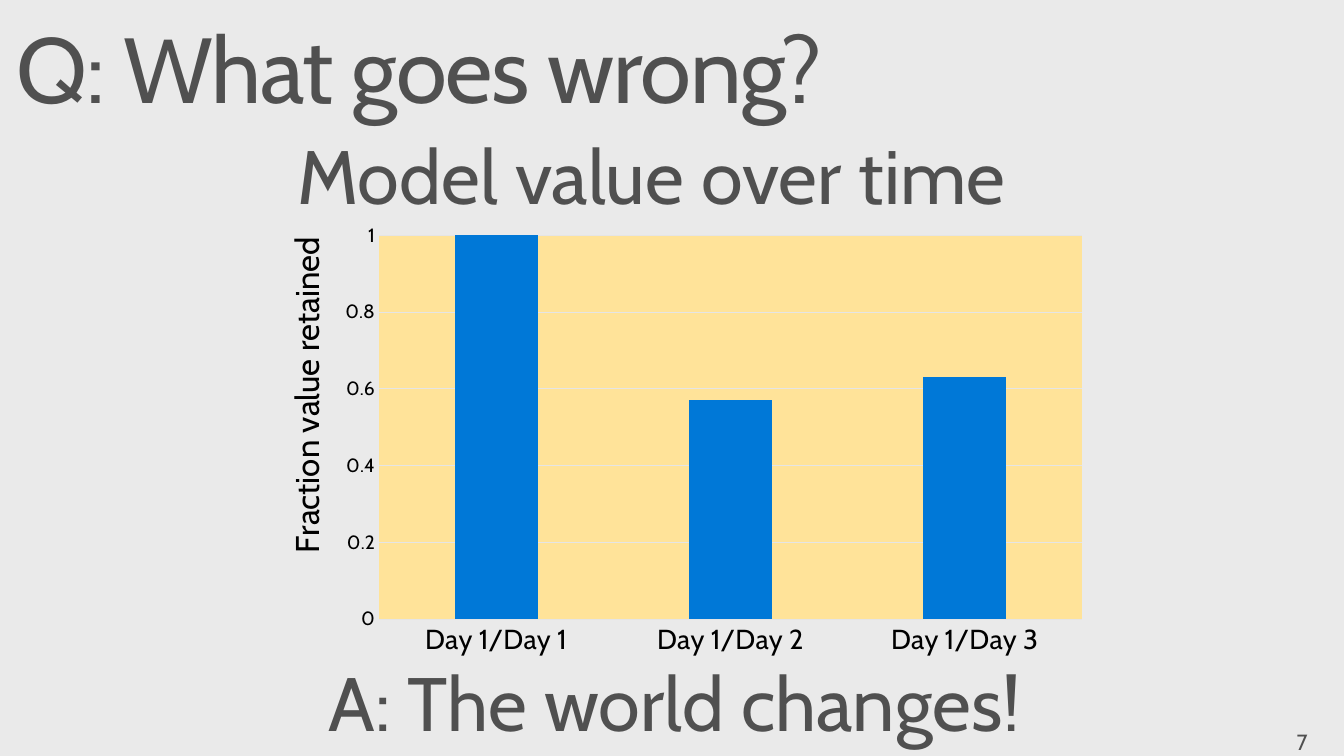
from dataclasses import dataclass

import lxml.etree
import pptx
import pptx.chart.data
import pptx.dml.color
import pptx.enum.chart
import pptx.enum.text
import pptx.oxml.ns
import pptx.util

Inches = pptx.util.Inches
Align = pptx.enum.text.PP_ALIGN
Anchor = pptx.enum.text.MSO_ANCHOR


@dataclass(frozen=True)
class Theme:
    font: str = "Cabin"
    background: str = "EAEAEA"
    text: str = "505050"
    axis_text: str = "000000"
    rule: str = "E5E5E5"
    plot: str = "FFE399"
    bar: str = "0078D7"
    title_size: float = 67.3
    caption_size: float = 55.1
    number_size: float = 16
    axis_title_size: float = 24
    category_size: float = 20
    value_size: float = 14
    chart_size: float = 10
    rule_width: float = 0.75


@dataclass(frozen=True)
class Label:
    text: str
    left: float
    top: float
    width: float
    height: float
    size: float
    margins: tuple[float, float]
    alignment: Align = Align.LEFT
    anchor: Anchor = Anchor.TOP
    wrap: bool = True
    space_after: float = 0


THEME = Theme()
TITLE = Label("Q: What goes wrong?", 0.01, 0.14, 11.73, 1.48, THEME.title_size, (0.16, 0.1))
LABELS = [
    Label("7", 12.92, 7.24, 0.68, 0.57, THEME.number_size, (0.2, 0.16), wrap=False, space_after=6),
    Label("A: The world changes!", 2.31, 6.41, 9.04, 1.48, THEME.caption_size, (0.1, 0.05),
          Align.CENTER, Anchor.MIDDLE),
    Label("Model value over time", 1.55, 1.08, 10.08, 1.48, THEME.caption_size, (0.1, 0.05),
          Align.CENTER, Anchor.MIDDLE),
]
RETAINED = {"Day 1/Day 1": 1, "Day 1/Day 2": 0.57, "Day 1/Day 3": 0.63}


def rgb(color: str) -> pptx.dml.color.RGBColor:
    return pptx.dml.color.RGBColor.from_string(color)


def style_font(font, size: float, color: str) -> None:
    font.name = THEME.font
    font.size = pptx.util.Pt(size)
    font.bold = False
    font.color.rgb = rgb(color)


def style_rule(line) -> None:
    line.color.rgb = rgb(THEME.rule)
    line.width = pptx.util.Pt(THEME.rule_width)


def fill_label(shape, label: Label) -> None:
    shape.left, shape.top = Inches(label.left), Inches(label.top)
    shape.width, shape.height = Inches(label.width), Inches(label.height)
    frame = shape.text_frame
    frame.auto_size = pptx.enum.text.MSO_AUTO_SIZE.NONE
    frame.word_wrap = label.wrap
    frame.vertical_anchor = label.anchor
    frame.margin_left = frame.margin_right = Inches(label.margins[0])
    frame.margin_top = frame.margin_bottom = Inches(label.margins[1])
    paragraph = frame.paragraphs[0]
    paragraph.text = label.text
    paragraph.alignment = label.alignment
    paragraph.line_spacing = 0.9
    paragraph.space_before = pptx.util.Pt(0)
    paragraph.space_after = pptx.util.Pt(label.space_after)
    style_font(paragraph.font, label.size, THEME.text)


def manual_layout(**settings: str | float) -> lxml.etree._Element:
    layout = lxml.etree.Element(pptx.oxml.ns.qn("c:layout"))
    manual = lxml.etree.SubElement(layout, pptx.oxml.ns.qn("c:manualLayout"))
    for name, value in settings.items():
        lxml.etree.SubElement(manual, pptx.oxml.ns.qn(f"c:{name}")).set("val", str(value))
    return layout


def replace_layout(parent: lxml.etree._Element, layout: lxml.etree._Element, index: int) -> None:
    for present in parent.findall(pptx.oxml.ns.qn("c:layout")):
        parent.remove(present)
    parent.insert(index, layout)


def add_retention_chart(slide) -> None:
    data = pptx.chart.data.CategoryChartData()
    data.categories = list(RETAINED)
    data.add_series("Series 1", list(RETAINED.values()))
    chart = slide.shapes.add_chart(
        pptx.enum.chart.XL_CHART_TYPE.COLUMN_CLUSTERED,
        Inches(2.55), Inches(2.2), Inches(8.57), Inches(4.57), data).chart
    chart.has_legend = False
    chart.has_title = False
    style_font(chart.font, THEME.chart_size, THEME.text)

    plot = chart.plots[0]
    plot.gap_width = 182
    plot.vary_by_categories = False
    bars = plot.series[0].format.fill
    bars.solid()
    bars.fore_color.rgb = rgb(THEME.bar)

    category_axis, value_axis = chart.category_axis, chart.value_axis
    for axis, size in ((category_axis, THEME.category_size), (value_axis, THEME.value_size)):
        axis.major_tick_mark = axis.minor_tick_mark = pptx.enum.chart.XL_TICK_MARK.NONE
        style_font(axis.tick_labels.font, size, THEME.axis_text)
    style_rule(category_axis.format.line)
    value_axis.format.line.fill.background()
    value_axis.minimum_scale, value_axis.maximum_scale = 0, 1
    value_axis.major_unit = 0.2
    value_axis.tick_labels.number_format = "General"
    value_axis.tick_labels.number_format_is_linked = False
    value_axis.has_major_gridlines = True
    style_rule(value_axis.major_gridlines.format.line)

    axis_title = value_axis.axis_title
    paragraph = axis_title.text_frame.paragraphs[0]
    paragraph.add_run().text = "Fraction value retained"
    style_font(paragraph.font, THEME.axis_title_size, THEME.axis_text)
    replace_layout(axis_title._element,
                   manual_layout(xMode="edge", yMode="edge", x=0.03, y=0.03), 1)

    plot_area = chart._chartSpace.chart.plotArea
    replace_layout(plot_area, manual_layout(layoutTarget="inner", xMode="edge", yMode="edge",
                                            x=0.15, y=0.04, w=0.83, h=0.85), 0)
    properties = lxml.etree.SubElement(plot_area, pptx.oxml.ns.qn("c:spPr"))
    fill = lxml.etree.SubElement(properties, pptx.oxml.ns.qn("a:solidFill"))
    lxml.etree.SubElement(fill, pptx.oxml.ns.qn("a:srgbClr")).set("val", THEME.plot)


def main() -> None:
    presentation = pptx.Presentation()
    presentation.slide_width = Inches(13.6)
    presentation.slide_height = Inches(7.65)
    slide = presentation.slides.add_slide(presentation.slide_layouts.get_by_name("Title Only"))
    slide.background.fill.solid()
    slide.background.fill.fore_color.rgb = rgb(THEME.background)

    title = slide.shapes.title
    fill_label(title, TITLE)
    title.text_frame.paragraphs[0].font._element.set("spc", "-100")
    for label in LABELS:
        fill_label(slide.shapes.add_textbox(0, 0, 0, 0), label)
    add_retention_chart(slide)
    presentation.save("out.pptx")


if __name__ == "__main__":
    main()
